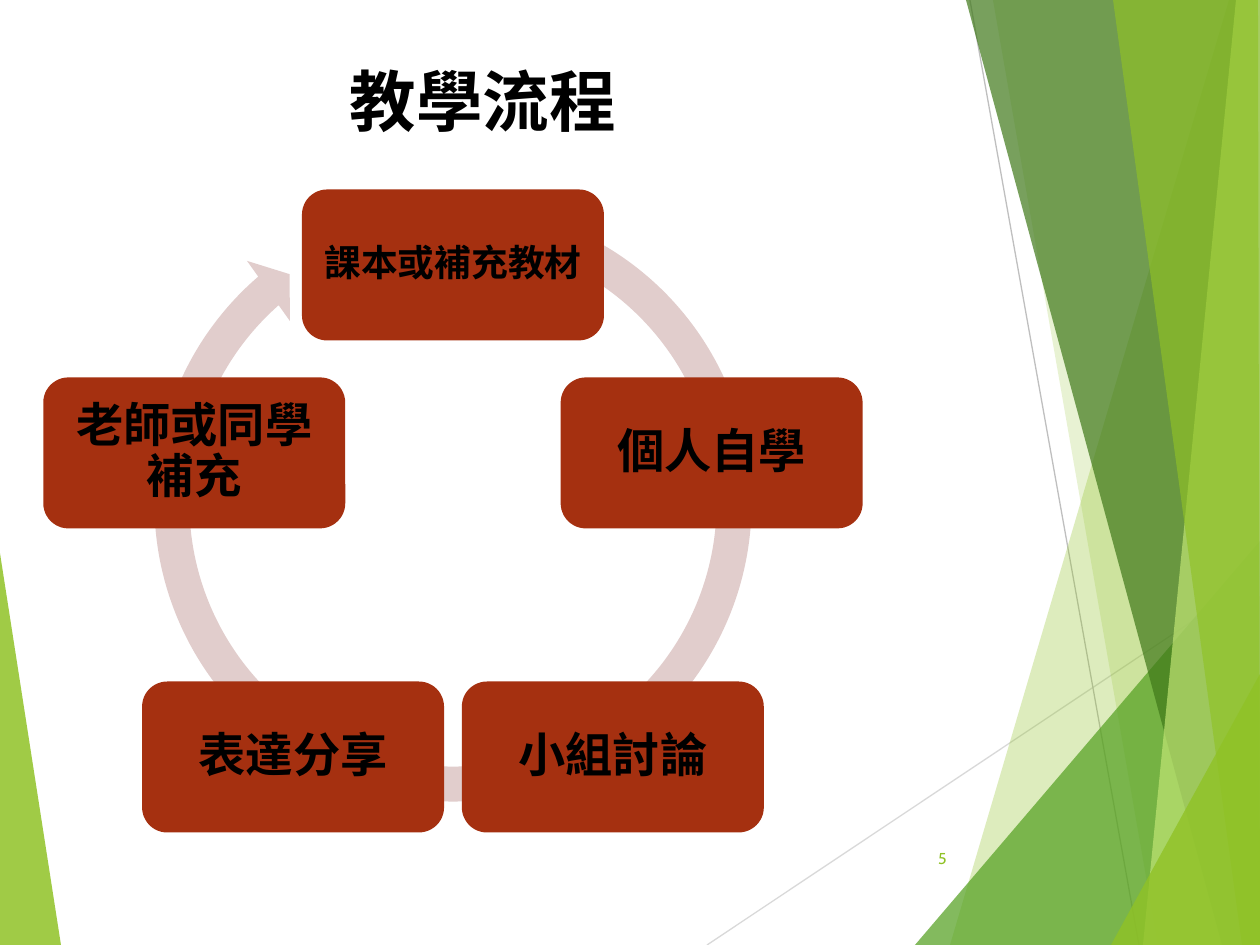
from math import cos, radians, sin

from lxml.etree import SubElement
from pptx import Presentation
from pptx.dml.color import RGBColor
from pptx.enum.shapes import MSO_CONNECTOR, MSO_SHAPE
from pptx.enum.text import MSO_ANCHOR, PP_ALIGN
from pptx.oxml.ns import qn
from pptx.util import Pt

EMU_PER_PX = 914400 / 126
SLIDE_WIDTH, SLIDE_HEIGHT = 1260, 945
CJK_FONT = "Noto Sans CJK SC"

BACK_FACETS = [
    ([(0, 553), (61, 945), (0, 945)], "90C226", 85),
]
FRONT_FACETS = [
    ([(1229, 0), (950, 945), (1260, 945), (1260, 0)], "90C226", 30),
    ([(993, 0), (1158, 945), (1260, 945), (1260, 0)], "90C226", 20),
    ([(915, 945), (1260, 541), (1260, 945)], "54A021", 72),
    ([(966, 0), (1222, 945), (1260, 945), (1260, 0)], "3F7819", 70),
    ([(1236, 0), (1143, 945), (1260, 945), (1260, 0)], "C0E474", 70),
    ([(1113, 0), (1242, 945), (1260, 945), (1258, 0)], "90C226", 65),
    ([(1111, 945), (1260, 674), (1260, 945)], "90C226", 80),
]
RAYS = [
    ((707, 945), (1260, 576), "D9D9D9"),
    ((970, 0), (1139, 945), "BFBFBF"),
]
STEPS = [
    ("課本或補充教材", 21, 11),
    ("個人自學", 27, 14),
    ("小組討論", 27, 14),
    ("表達分享", 27, 14),
    ("老師或同學補充", 27, 14),
]
CYCLE_CENTER = (453, 537)
CYCLE_RADIUS = 272
STEP_SIZE = (302, 151)


def px(length):
    return round(length * EMU_PER_PX)


def color(hex_string):
    return RGBColor.from_string(hex_string)


def place(shape, left, top, width, height):
    shape.left, shape.top = px(left), px(top)
    shape.width, shape.height = px(width), px(height)


def paint(shape, fill, opacity=100):
    shape.shadow.inherit = False
    shape.line.fill.background()
    shape.fill.solid()
    shape.fill.fore_color.rgb = color(fill)
    if opacity < 100:
        color_element = shape.element.spPr.find(qn("a:solidFill"))[0]
        SubElement(color_element, qn("a:alpha")).set("val", str(opacity * 1000))


def write(shape, text, size, font="Cabin", fill="000000", bold=False,
          align=PP_ALIGN.CENTER, spacing=1.0, inset=None):
    frame = shape.text_frame
    frame.word_wrap = True
    frame.vertical_anchor = MSO_ANCHOR.MIDDLE
    if inset is not None:
        frame.margin_left = frame.margin_right = px(inset)
        frame.margin_top = frame.margin_bottom = px(inset)
    paragraph = frame.paragraphs[0]
    paragraph.alignment = align
    paragraph.line_spacing = spacing
    run = paragraph.add_run()
    run.text = text
    run.font.size = Pt(size)
    run.font.bold = bold
    run.font.name = font
    run.font.color.rgb = color(fill)
    SubElement(run.font._element, qn("a:ea")).set("typeface", CJK_FONT)


def add_facet(slide, points, fill, opacity):
    builder = slide.shapes.build_freeform(*points[0], scale=EMU_PER_PX)
    builder.add_line_segments(points[1:], close=True)
    paint(builder.convert_to_shape(), fill, opacity)


def add_ray(slide, start, end, line_color):
    ray = slide.shapes.add_connector(
        MSO_CONNECTOR.STRAIGHT, *map(px, start + end))
    ray.line.color.rgb = color(line_color)
    ray.line.width = Pt(0.75)
    SubElement(ray.element.spPr, qn("a:effectLst"))


def add_cycle_arrow(slide):
    arrow = slide.shapes.add_shape(
        MSO_SHAPE.CIRCULAR_ARROW, px(135), px(185), px(636), px(636))
    for index, value in enumerate([0.055, 3.307, 137.382, 174.09, 0.058]):
        arrow.adjustments[index] = value
    paint(arrow, "E1CDCC")


def add_step(slide, index, text, size, inset):
    angle = radians(index * 360 / len(STEPS))
    width, height = STEP_SIZE
    left = CYCLE_CENTER[0] + CYCLE_RADIUS * sin(angle) - width / 2
    top = CYCLE_CENTER[1] - CYCLE_RADIUS * cos(angle) - height / 2
    step = slide.shapes.add_shape(
        MSO_SHAPE.ROUNDED_RECTANGLE, px(left), px(top), px(width), px(height))
    paint(step, "A53010")
    write(step, text, size, font=CJK_FONT, bold=True, spacing=0.9, inset=inset)


def add_page_number(slide, text):
    box = slide.shapes.add_textbox(px(888), px(833), px(71), px(50))
    write(box, text, 9, fill="90C226", align=PP_ALIGN.RIGHT)


def main():
    presentation = Presentation()
    presentation.slide_width = px(SLIDE_WIDTH)
    presentation.slide_height = px(SLIDE_HEIGHT)
    slide = presentation.slides.add_slide(presentation.slide_layouts[5])

    for facet in BACK_FACETS:
        add_facet(slide, *facet)
    for ray in RAYS:
        add_ray(slide, *ray)
    for facet in FRONT_FACETS:
        add_facet(slide, *facet)

    add_page_number(slide, "5")
    title = slide.shapes.title
    place(title, 76, 55, 814, 90)
    write(title, "教學流程", 38, bold=True)

    add_cycle_arrow(slide)
    for index, step in enumerate(STEPS):
        add_step(slide, index, *step)
    presentation.save("out.pptx")


if __name__ == "__main__":
    main()
